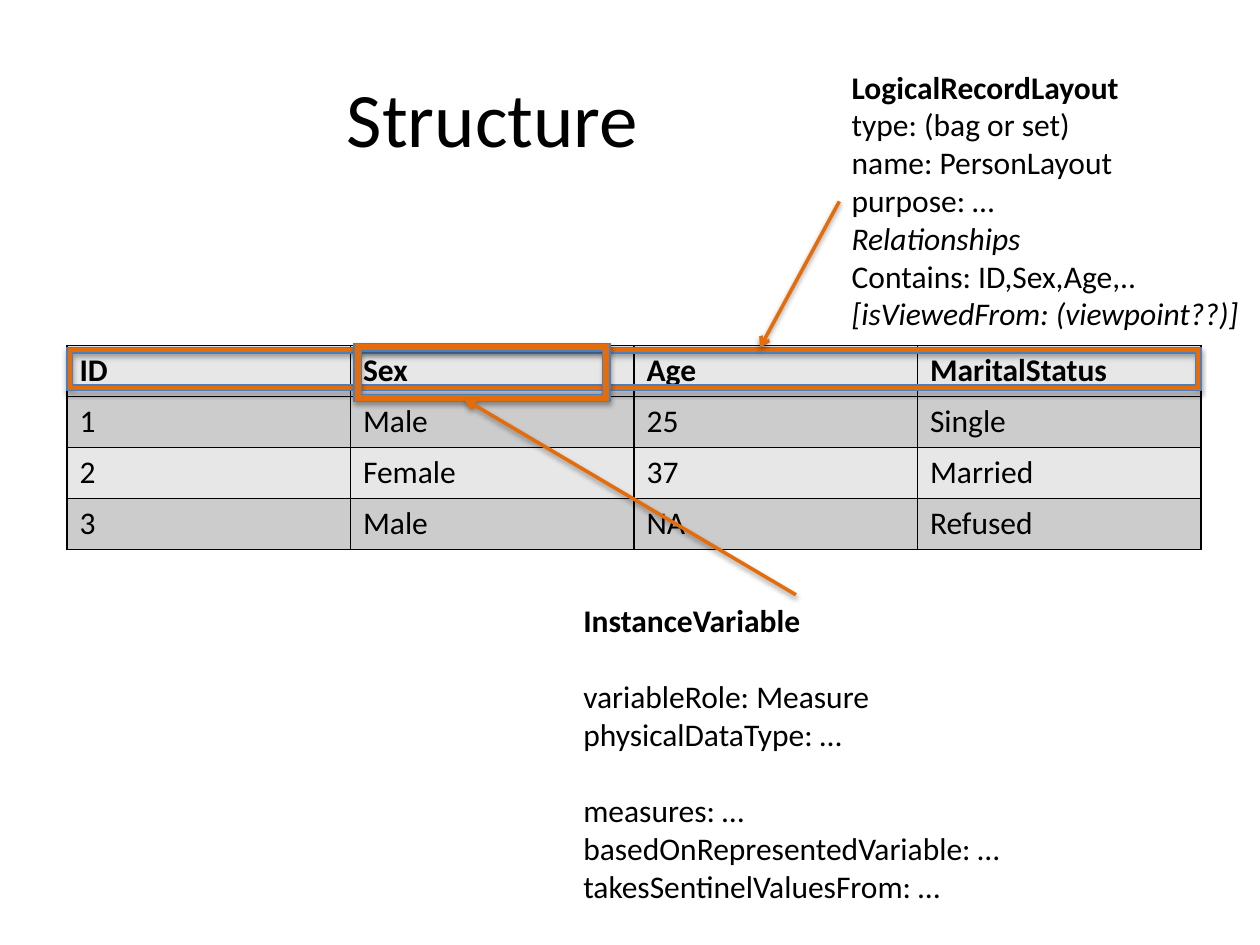
from dataclasses import dataclass

from lxml import etree
from pptx import Presentation
from pptx.dml.color import RGBColor
from pptx.enum.shapes import MSO_CONNECTOR, MSO_SHAPE
from pptx.enum.text import MSO_ANCHOR, MSO_AUTO_SIZE, PP_ALIGN
from pptx.oxml.ns import qn
from pptx.util import Cm, Pt

STRAIGHT = MSO_CONNECTOR.STRAIGHT
FRAME = MSO_SHAPE.FRAME
MIDDLE = MSO_ANCHOR.MIDDLE
GROW = MSO_AUTO_SIZE.SHAPE_TO_FIT_TEXT
CENTER = PP_ALIGN.CENTER

BLACK = RGBColor(0x00, 0x00, 0x00)
ORANGE = RGBColor(0xE4, 0x6C, 0x0A)
BLUE = RGBColor(0x4B, 0x7E, 0xBC)
LIGHT = RGBColor(0xE7, 0xE7, 0xE7)
DARK = RGBColor(0xCC, 0xCC, 0xCC)
FONT = "Calibri"
BODY_SIZE = 18
LINE_GAP = Pt(22)
TOP, LEFT = 0, 1

ROWS = [
    ("ID", "Sex", "Age", "MaritalStatus"),
    ("1", "Male", "25", "Single"),
    ("2", "Female", "37", "Married"),
    ("3", "Male", "NA", "Refused"),
]


@dataclass
class Box:
    left: float
    top: float
    width: float
    height: float

    def lengths(self) -> tuple:
        return Cm(self.left), Cm(self.top), Cm(self.width), Cm(self.height)


@dataclass
class Line:
    text: str
    bold: bool = False
    italic: bool = False
    gap: bool = False


@dataclass
class Callout:
    frame: Box
    note: Box
    wrap: bool
    lines: list[Line]
    site: int
    target: tuple[float, float]


TABLE = Box(1.35, 6.96, 22.86, 4.12)
TITLE = Box(1.42, 0.76, 17.02, 3.18)
RECORD = Callout(
    Box(1.35, 7.01, 22.86, 0.86),
    Box(16.92, 1.24, 9.98, 5.64),
    True,
    [
        Line("LogicalRecordLayout", bold=True),
        Line("type: (bag or set)"),
        Line("name: PersonLayout"),
        Line("purpose: …"),
        Line("Relationships", italic=True),
        Line("Contains: ID,Sex,Age,.."),
        Line("[isViewedFrom: (viewpoint??)]", italic=True),
    ],
    LEFT,
    (15.32, 7.01),
)
VARIABLE = Callout(
    Box(7.14, 6.93, 5.16, 1.17),
    Box(11.51, 11.99, 9.07, 6.4),
    False,
    [
        Line("InstanceVariable", bold=True),
        Line("variableRole: Measure", gap=True),
        Line("physicalDataType: …"),
        Line("measures: …", gap=True),
        Line("basedOnRepresentedVariable: …"),
        Line("takesSentinelValuesFrom: …"),
    ],
    TOP,
    (9.37, 8.05),
)


def style(p, size: float, bold: bool = False, italic: bool = False) -> None:
    for r in p.runs:
        r.font.name = FONT
        r.font.size = Pt(size)
        r.font.bold = bold
        r.font.italic = italic
        r.font.color.rgb = BLACK


def add_shadow(shape, distance: float, alpha: int) -> None:
    effects = etree.SubElement(shape._element.spPr, qn("a:effectLst"))
    shadow = etree.SubElement(
        effects, qn("a:outerShdw"), blurRad=str(Pt(3.1)), dist=str(Pt(distance)),
        dir="5400000", rotWithShape="0",
    )
    color = etree.SubElement(shadow, qn("a:srgbClr"), val=str(BLACK))
    etree.SubElement(color, qn("a:alpha"), val=str(alpha * 1000))


def add_borders(cell) -> None:
    props = cell._tc.get_or_add_tcPr()
    for i, side in enumerate(("a:lnL", "a:lnR", "a:lnT", "a:lnB")):
        ln = etree.Element(qn(side), w=str(Pt(1)))
        fill = etree.SubElement(ln, qn("a:solidFill"))
        etree.SubElement(fill, qn("a:srgbClr"), val=str(BLACK))
        props.insert(i, ln)


def add_data_table(s) -> None:
    table = s.shapes.add_table(len(ROWS), len(ROWS[0]), *TABLE.lengths()).table
    for i, row in enumerate(ROWS):
        for j, text in enumerate(row):
            cell = table.cell(i, j)
            cell.text_frame.text = text
            style(cell.text_frame.paragraphs[0], BODY_SIZE, bold=i == 0)
            cell.fill.solid()
            cell.fill.fore_color.rgb = DARK if i % 2 else LIGHT
            add_borders(cell)


def add_note(s, callout: Callout):
    note = s.shapes.add_textbox(*callout.note.lengths())
    tf = note.text_frame
    tf.word_wrap = callout.wrap
    tf.auto_size = GROW
    tf.text = "\n".join(line.text for line in callout.lines)
    for p, line in zip(tf.paragraphs, callout.lines):
        style(p, BODY_SIZE, line.bold, line.italic)
        if line.gap:
            p.space_before = LINE_GAP
    return note


def add_arrow(s, note, callout: Callout) -> None:
    x, y = callout.target
    arrow = s.shapes.add_connector(STRAIGHT, note.left, note.top, Cm(x), Cm(y))
    arrow.begin_connect(note, callout.site)
    arrow.line.color.rgb = ORANGE
    arrow.line.width = Pt(2)
    etree.SubElement(arrow.line._get_or_add_ln(), qn("a:tailEnd"), type="arrow")
    add_shadow(arrow, 1.6, 38)


def add_frame(s, box: Box) -> None:
    frame = s.shapes.add_shape(FRAME, *box.lengths())
    frame.fill.solid()
    frame.fill.fore_color.rgb = ORANGE
    frame.line.color.rgb = BLUE
    frame.line.width = Pt(0.75)
    add_shadow(frame, 1.8, 35)


def add_title(s) -> None:
    tf = s.shapes.add_textbox(*TITLE.lengths()).text_frame
    tf.word_wrap = True
    tf.vertical_anchor = MIDDLE
    tf.text = "Structure"
    p = tf.paragraphs[0]
    p.alignment = CENTER
    style(p, 44)


def main() -> None:
    prs = Presentation()
    prs.slide_width, prs.slide_height = Cm(25.4), Cm(19.05)
    s = prs.slides.add_slide(prs.slide_layouts[6])
    add_data_table(s)
    for callout in (RECORD, VARIABLE):
        add_frame(s, callout.frame)
        add_arrow(s, add_note(s, callout), callout)
    add_title(s)
    prs.save("out.pptx")


if __name__ == "__main__":
    main()
